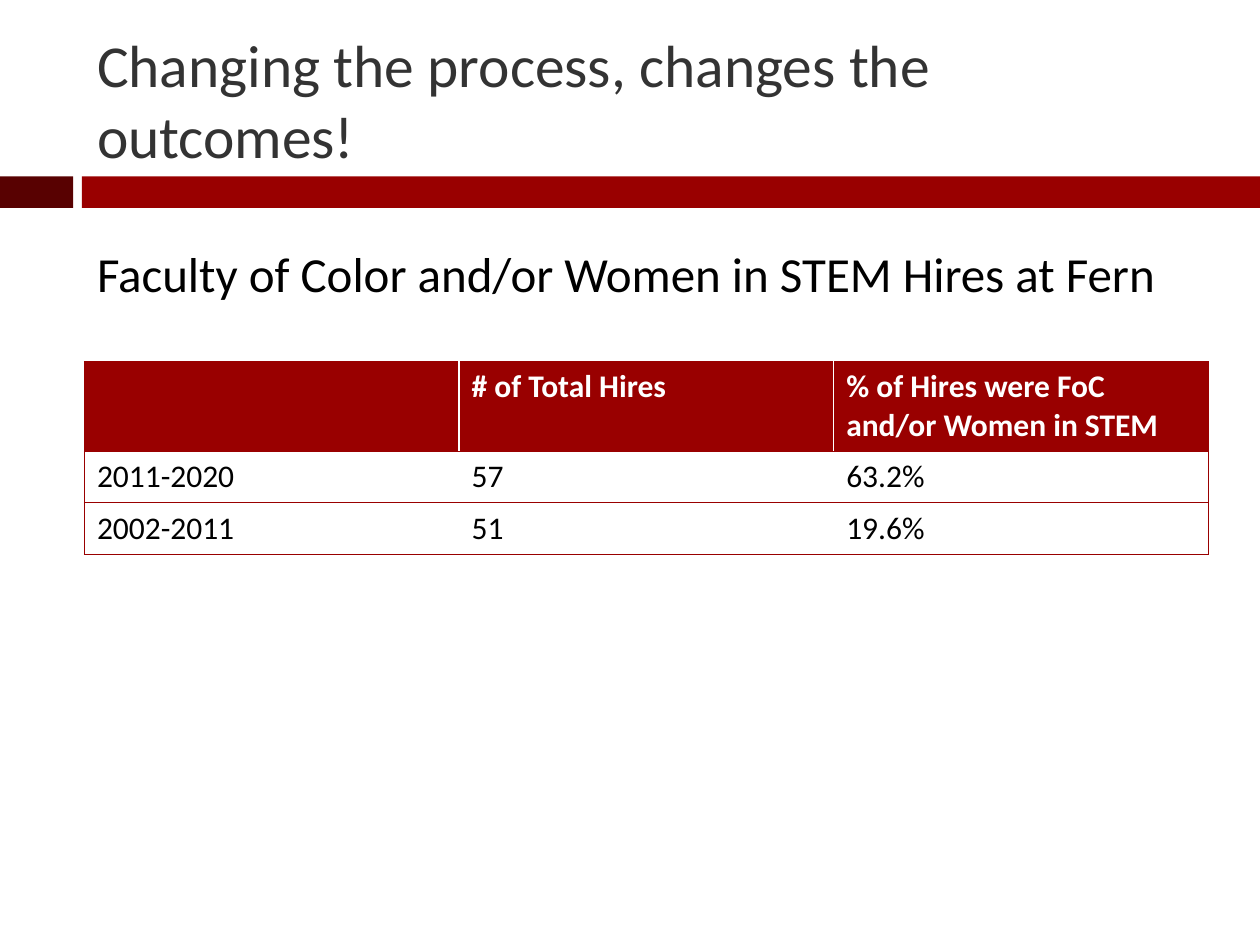
from dataclasses import dataclass

from pptx import Presentation
from pptx.dml.color import RGBColor as RGB
from pptx.enum.shapes import MSO_SHAPE as Shape
from pptx.enum.text import MSO_ANCHOR as Anchor, MSO_AUTO_SIZE as AutoSize, PP_ALIGN as Align
from pptx.oxml import parse_xml
from pptx.oxml.ns import nsdecls
from pptx.util import Inches, Pt


@dataclass(frozen=True)
class Theme:
    font: str = "Calibri"
    accent: str = "990000"
    dark: str = "580101"
    heading: str = "333333"
    text: str = "000000"
    light: str = "FFFFFF"
    title_size: int = 34
    body_size: int = 28
    table_size: int = 18
    border: float = 0.79


THEME = Theme()
LEFT, WIDTH = 0.67, 8.92
HIRES = [
    ["", "# of Total Hires", "% of Hires were FoC and/or Women in STEM"],
    ["2011-2020", "57", "63.2%"],
    ["2002-2011", "51", "19.6%"],
]


def add_run(p, text, size, color, bold=False):
    r = p.add_run()
    r.text = text
    r.font.name, r.font.size, r.font.bold = THEME.font, Pt(size), bold
    r.font.color.rgb = RGB.from_string(color)


def add_band(slide, box, split=0.58, gap=0.07):
    """Place a dark block and an accent bar side by side, behind the text."""
    x, y, w, h = box
    start = split + gap
    parts = [(x, split, THEME.dark), (x + start, w - start, THEME.accent)]
    for i, (left, width, color) in enumerate(parts):
        s = slide.shapes.add_shape(Shape.RECTANGLE, *map(Inches, (left, y, width, h)))
        s.shadow.inherit = False
        s.fill.solid()
        s.fill.fore_color.rgb = RGB.from_string(color)
        s.line.fill.background()
        slide.shapes._spTree.insert(2 + i, s._element)


def fill_placeholder(sp, box, text, size, color, anchor):
    sp.left, sp.top, sp.width, sp.height = map(Inches, box)
    tf = sp.text_frame
    tf.word_wrap, tf.auto_size, tf.vertical_anchor = True, AutoSize.NONE, anchor
    p = tf.paragraphs[0]
    p.alignment, p.space_before = Align.LEFT, Pt(0)
    pPr = p._p.get_or_add_pPr()
    pPr.set("marL", "0")
    pPr.set("indent", "0")
    pPr.append(parse_xml(f"<a:buNone {nsdecls('a')}/>"))
    add_run(p, text, size, color)


def set_borders(cell, sides):
    tcPr = cell._tc.get_or_add_tcPr()
    for i, side in enumerate(sides):
        tcPr.insert(i, parse_xml(
            f'<a:ln{side} {nsdecls("a")} w="{Pt(THEME.border)}"><a:solidFill>'
            f'<a:srgbClr val="{THEME.accent}"/></a:solidFill></a:ln{side}>'))


def add_hires_table(slide, box, rows):
    n_rows, n_cols = len(rows), len(rows[0])
    table = slide.shapes.add_table(n_rows, n_cols, *map(Inches, box)).table
    for i, row in enumerate(rows):
        header = i == 0
        for j, text in enumerate(row):
            cell = table.cell(i, j)
            cell.fill.solid()
            cell.fill.fore_color.rgb = RGB.from_string(THEME.accent if header else THEME.light)
            sides = ("L" if j == 0 else "") + ("R" if j == n_cols - 1 else "") + "TB"
            set_borders(cell, sides)
            if text:
                add_run(cell.text_frame.paragraphs[0], text, THEME.table_size,
                        THEME.light if header else THEME.text, header)


def main():
    prs = Presentation()
    prs.slide_width, prs.slide_height = Inches(10), Inches(7.5)
    slide = prs.slides.add_slide(prs.slide_layouts[1])
    add_band(slide, (0, 1.4, 10, 0.25))
    fill_placeholder(slide.shapes.title, (LEFT, 0.25, WIDTH, 1.08),
                     "Changing the process, changes the outcomes!",
                     THEME.title_size, THEME.heading, Anchor.MIDDLE)
    fill_placeholder(slide.placeholders[1], (LEFT, 1.88, WIDTH, 1.08),
                     "Faculty of Color and/or Women in STEM Hires at Fern",
                     THEME.body_size, THEME.text, Anchor.TOP)
    add_hires_table(slide, (LEFT, 2.87, WIDTH, 0.41 * len(HIRES)), HIRES)
    prs.save("out.pptx")


if __name__ == "__main__":
    main()
